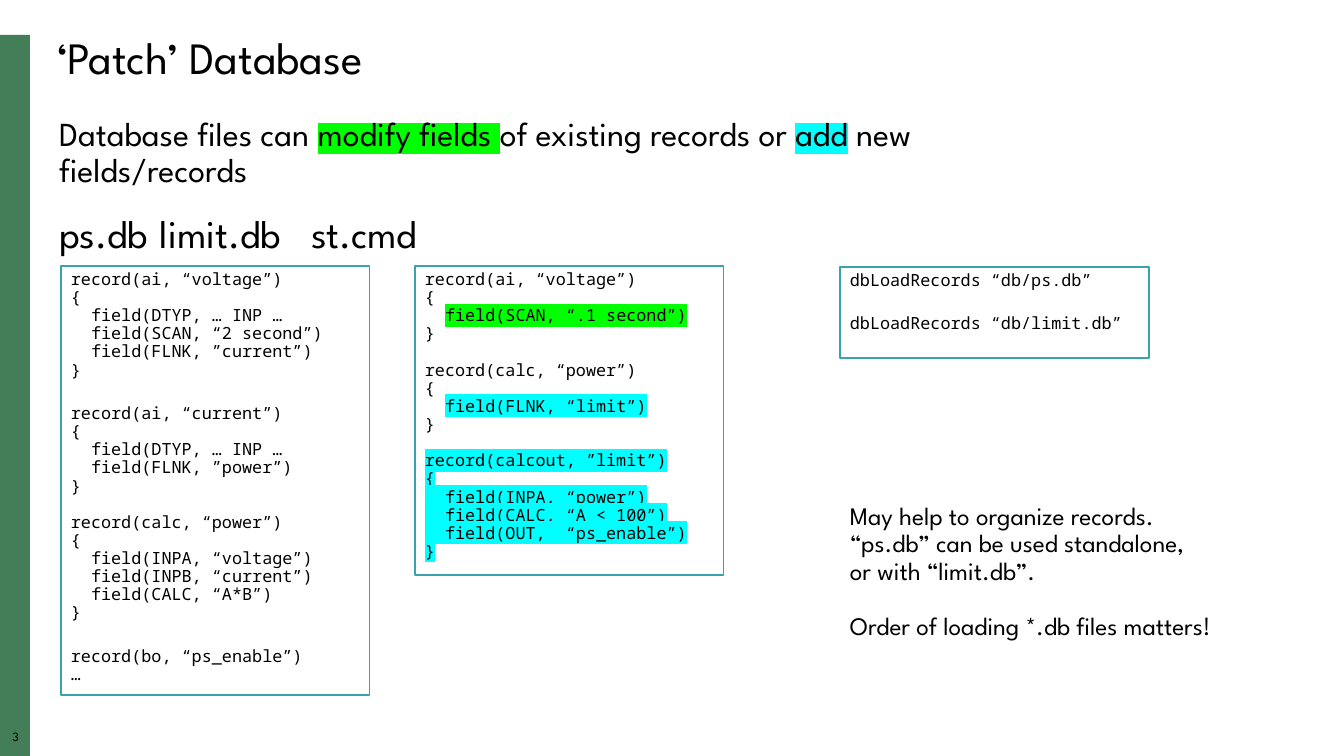
"""Build the slide on patching database files."""
from copy import deepcopy

from pptx import Presentation
from pptx.dml.color import RGBColor
from pptx.enum.shapes import MSO_SHAPE as Shape
from pptx.enum.text import MSO_ANCHOR as Anchor, MSO_AUTO_SIZE as AutoSize, PP_ALIGN as Align
from pptx.oxml.ns import qn
from pptx.util import Pt
from lxml.etree import SubElement

EMU_PER_PX = 914400 / 100.8
SANS, MONO = "League Spartan", "Noto Sans Mono"
BLACK, WHITE, GREEN, TEAL = "000000", "FFFFFF", "447E59", "3BA2AD"
CHANGED, ADDED = "00FF00", "00FFFF"

TITLE = "‘Patch’ Database"
INTRO = [
    ("Database files can ", None),
    ("modify fields ", CHANGED),
    ("of existing records or ", None),
    ("add", ADDED),
    (" new fields/records", None),
]
FILE_NAMES = ["ps.db", "limit.db", "st.cmd"]
FILE_TABS = [312, 685]

PS_DB = [
    [("""record(ai, “voltage”)
{
  field(DTYP, … INP …
  field(SCAN, “2 second”)
  field(FLNK, ”current”)
}""", None)],
    [("""record(ai, “current”)
{
  field(DTYP, … INP …
  field(FLNK, ”power”)
}

record(calc, “power”)
{
  field(INPA, “voltage”)
  field(INPB, “current”)
  field(CALC, “A*B”)
}""", None)],
    [("""record(bo, “ps_enable”)
…""", None)],
]
LIMIT_DB = [[
    ("record(ai, “voltage”)\n{\n  ", None),
    ("field(SCAN, “.1 second”)\n", CHANGED),
    ("}\n\nrecord(calc, “power”)\n{\n  ", None),
    ("field(FLNK, “limit”)\n", ADDED),
    ("}\n\n", None),
    ("""record(calcout, ”limit”)
{
  field(INPA, “power”)
  field(CALC, “A < 100”)
  field(OUT,  “ps_enable”)
}""", ADDED),
]]
ST_CMD = [
    [("dbLoadRecords “db/ps.db”", None)],
    [("dbLoadRecords “db/limit.db”", None)],
]
CODE_BOXES = [
    ((61, 266, 309, 429), PS_DB),
    ((415, 266, 309, 309), LIMIT_DB),
    ((840, 267, 309, 91), ST_CMD),
]
NOTES = [
    ("May help to organize records.", 0),
    ("“ps.db” can be used standalone,\nor with “limit.db”.", 0),
    ("Order of loading *.db files matters!", 20),
]


def px(length):
    return round(length * EMU_PER_PX)


def color(value):
    return RGBColor.from_string(value)


def place(box, area):
    box.left, box.top, box.width, box.height = map(px, area)


def add_spans(para, spans, size, font=SANS):
    for text, highlight in spans:
        for number, line in enumerate(text.split("\n")):
            if number:
                para.add_line_break()
                line_break = para._p[-1]
            span = para.add_run()
            span.text = line
            span.font.size = Pt(size)
            span.font.color.rgb = color(BLACK)
            span.font.name = font
            properties = span._r.get_or_add_rPr()
            if highlight:
                mark = SubElement(properties, qn("a:highlight"))
                SubElement(mark, qn("a:srgbClr"), val=highlight)
                properties.find(qn("a:solidFill")).addnext(mark)
            if number:
                line_break.append(deepcopy(properties))
            if not line:
                para._p.remove(span._r)


def add_para(box, spans, size, font=SANS, before=0, align=Align.LEFT):
    frame = box.text_frame
    para = frame.paragraphs[0]
    if para.runs:
        para = frame.add_paragraph()
    para.alignment = align
    para.line_spacing = 0.9
    para.space_before = Pt(before)
    add_spans(para, spans, size, font)
    return para


def prepare(box, anchor=Anchor.TOP):
    frame = box.text_frame
    frame.word_wrap = True
    frame.auto_size = AutoSize.NONE
    frame.vertical_anchor = anchor


def add_rectangle(page, area, fill, line=None):
    box = page.shapes.add_shape(Shape.RECTANGLE, *map(px, area))
    box.shadow.inherit = False
    box.fill.solid()
    box.fill.fore_color.rgb = color(fill)
    if line:
        box.line.color.rgb = color(line)
        box.line.width = Pt(0.85)
    else:
        box.line.fill.background()
    return box


def add_textbox(page, area):
    box = page.shapes.add_textbox(*map(px, area))
    prepare(box)
    return box


def add_side_bar(page):
    add_rectangle(page, (0, 35, 30, 721), GREEN)
    box = add_textbox(page, (0, 731, 31, 17))
    frame = box.text_frame
    frame.margin_left = frame.margin_right = frame.margin_top = frame.margin_bottom = 0
    add_para(box, [("3", None)], 9, align=Align.CENTER)


def fill_body(body):
    place(body, (49, 112, 1067, 161))
    prepare(body)
    file_row = [("\t".join(FILE_NAMES), None)]
    for spans, size, before, stops in [(INTRO, 24, 0, []), (file_row, 28, 18, FILE_TABS)]:
        para = add_para(body, spans, size, before=before)
        properties = para._p.get_or_add_pPr()
        properties.set("marL", "0")
        properties.set("indent", "0")
        SubElement(properties, qn("a:buNone"))
        if stops:
            tabs = SubElement(properties, qn("a:tabLst"))
            for stop in stops:
                SubElement(tabs, qn("a:tab"), pos=str(px(stop)), algn="l")


def main():
    deck = Presentation()
    deck.slide_width, deck.slide_height = px(1344), px(756)
    page = deck.slides.add_slide(deck.slide_layouts[1])
    add_side_bar(page)

    title = page.shapes.title
    place(title, (47, 30, 1260, 59))
    prepare(title, Anchor.MIDDLE)
    add_para(title, [(TITLE, None)], 32)
    fill_body(page.placeholders[1])

    for area, blocks in CODE_BOXES:
        box = add_rectangle(page, area, WHITE, TEAL)
        prepare(box)
        for number, spans in enumerate(blocks):
            add_para(box, spans, 12, MONO, before=18 if number else 0)

    notes = add_textbox(page, (840, 499, 444, 147))
    for text, before in NOTES:
        add_para(notes, [(text, None)], 18, before=before)
    deck.save("out.pptx")


if __name__ == "__main__":
    main()
